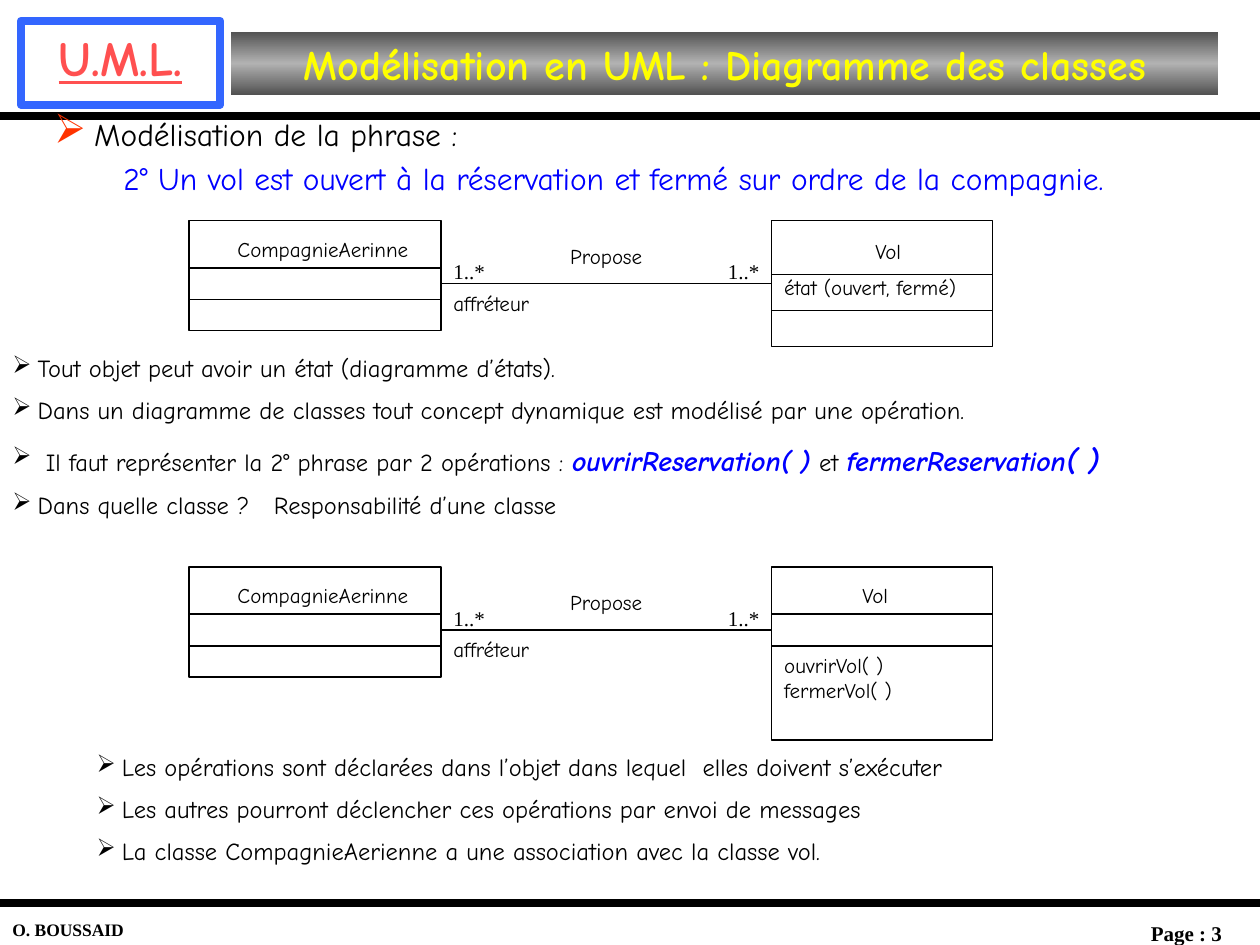
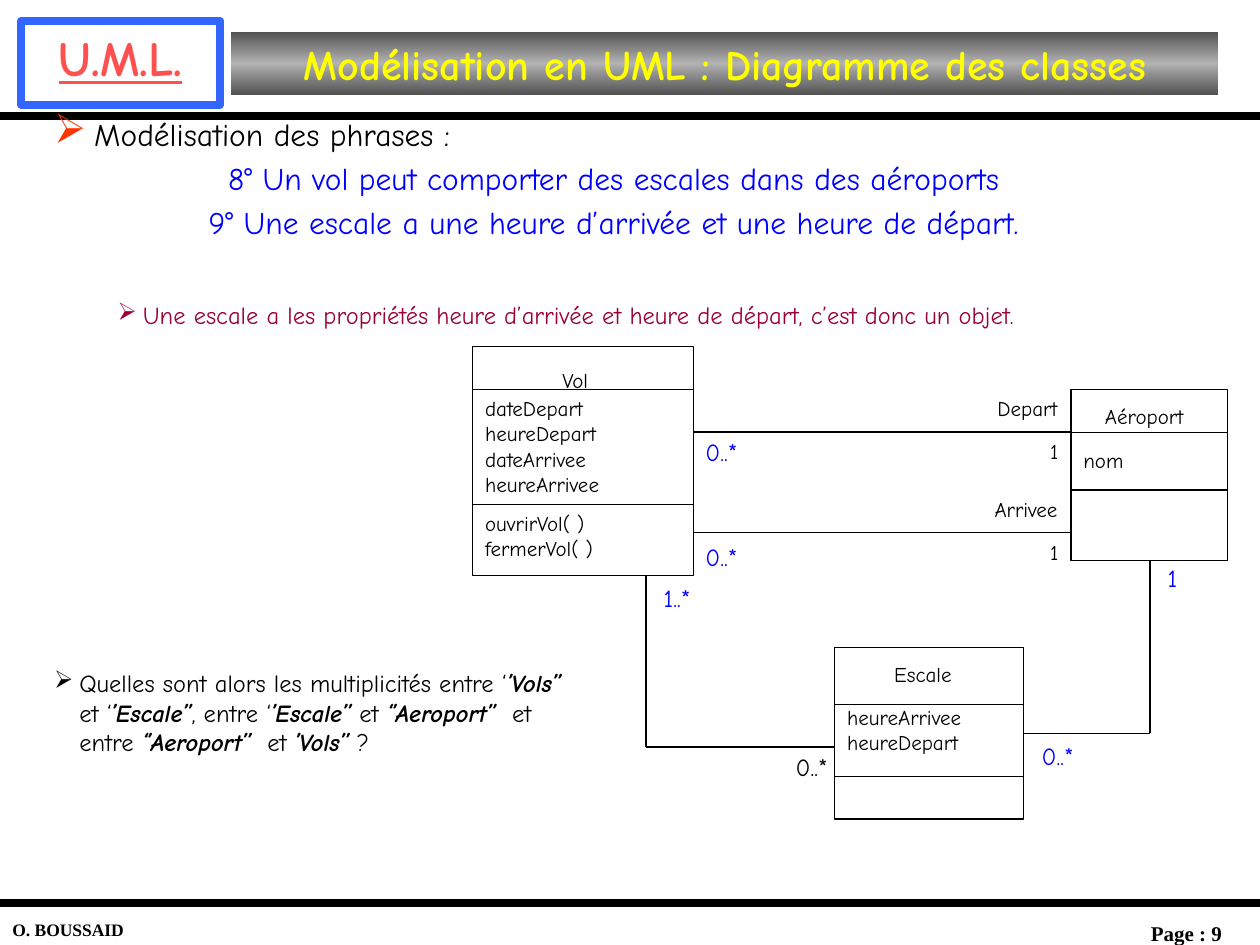
from dataclasses import dataclass
from itertools import pairwise
from typing import Any, NamedTuple

from pptx import Presentation
from pptx.dml.color import RGBColor as Rgb
from pptx.enum.shapes import MSO_CONNECTOR as Conn, MSO_SHAPE as Kind
from pptx.enum.text import MSO_ANCHOR as Anchor, MSO_AUTO_SIZE as Fit, PP_ALIGN as Align
from pptx.oxml import parse_xml
from pptx.oxml.ns import nsdecls
from pptx.util import Cm, Pt


@dataclass(frozen=True)
class Theme:
    hand: str = "Comic Neue"
    serif: str = "Times New Roman"
    ink: str = "000000"
    paper: str = "FFFFFF"
    blue: str = "0000FF"
    wine: str = "990033"
    mark: str = "FF3300"
    logo: str = "FF5050"
    frame: str = "3366FF"
    title: str = "FFFF00"
    band: tuple[str, ...] = ("525252", "B2B2B2", "525252")
    huge: int = 28
    head: int = 24
    lead: int = 18
    call: int = 16
    body: int = 14
    small: int = 12
    tiny: int = 10
    thin: float = 0.75
    thick: float = 4.5


T = Theme()


class Bit(NamedTuple):
    """A stretch of text in one style."""
    text: str
    size: int = T.body
    color: str = T.ink
    bold: bool = False
    italic: bool = False
    font: str = T.hand
    under: bool = False


class Para(NamedTuple):
    bits: list[Bit]
    align: Any = Align.LEFT
    gap: float = 0  # space before, as a share of the type size
    hang: float = 0
    bullet: bool = False
    accent: bool = False


class Note(NamedTuple):
    """A short label of a diagram, in cm."""
    text: str
    left: float
    top: float
    width: float
    align: Any = Align.LEFT
    size: int = T.small
    color: str = T.ink
    font: str = T.hand


class Klass(NamedTuple):
    """A UML class; cuts, name and lists are offsets from its corner."""
    name: str
    left: float
    top: float
    width: float
    height: float
    cuts: tuple[float, float]
    label: tuple[float, float, float]
    lists: tuple[tuple[float, str], ...] = ()


def put(target: Any, fmt: dict[str, Any]) -> None:
    for key, value in fmt.items():
        setattr(target, key, value)


def place(shape: Any, left: float, top: float, width: float, height: float) -> None:
    put(shape, {"left": Cm(left), "top": Cm(top), "width": Cm(width), "height": Cm(height)})


def stroke(line: Any, color: str, width: float) -> None:
    line.color.rgb = Rgb.from_string(color)
    line.width = Pt(width)


def mark(props: Any, accent: bool) -> None:
    """Add the arrow bullet, larger and red when accented."""
    tags = ['<a:buChar {} char="➢"/>']
    if accent:
        tags = [f'<a:buClr {{}}><a:srgbClr val="{T.mark}"/></a:buClr>',
                '<a:buSzPct {} val="130000"/>'] + tags
    for tag in tags:
        props.append(parse_xml(tag.format(nsdecls("a"))))


def write(frame: Any, paras: list[Para], inset: float = 0, anchor: Any = Anchor.TOP) -> None:
    put(frame, {"word_wrap": True, "auto_size": Fit.NONE, "vertical_anchor": anchor,
                "margin_left": Cm(0.25), "margin_right": Cm(0.25),
                "margin_top": Cm(inset), "margin_bottom": Cm(inset)})
    for i, para in enumerate(paras):
        line = frame.add_paragraph() if i else frame.paragraphs[0]
        props = line._p.get_or_add_pPr()
        if para.hang:
            props.set("marL", str(Cm(para.hang)))
            props.set("indent", str(-Cm(para.hang)))
        if para.bullet:
            mark(props, para.accent)
        line.alignment = para.align
        if i and para.gap:
            line.space_before = Pt(para.gap * max(bit.size for bit in para.bits))
        for bit in para.bits:
            run = line.add_run()
            run.text = bit.text
            put(run.font, {"name": bit.font, "size": Pt(bit.size), "bold": bit.bold,
                           "italic": bit.italic, "underline": bit.under})
            run.font.color.rgb = Rgb.from_string(bit.color)


def text(slide: Any, left: float, top: float, width: float, height: float,
         paras: list[Para]) -> None:
    box = slide.shapes.add_textbox(Cm(left), Cm(top), Cm(width), Cm(height))
    write(box.text_frame, paras)


def note(slide: Any, item: Note) -> None:
    rows = item.text.split("\n")
    paras = [Para([Bit(row, item.size, item.color, font=item.font)], item.align) for row in rows]
    text(slide, item.left, item.top, item.width, 0.6 * len(rows), paras)


def rule(slide: Any, *points: tuple[float, float], width: float = T.thin) -> None:
    """Join the points with straight lines."""
    for (x1, y1), (x2, y2) in pairwise(points):
        line = slide.shapes.add_connector(Conn.STRAIGHT, Cm(x1), Cm(y1), Cm(x2), Cm(y2))
        stroke(line.line, T.ink, width)
        line._element.spPr.append(parse_xml(f"<a:effectLst {nsdecls('a')}/>"))


def panel(slide: Any, left: float, top: float, width: float, height: float) -> Any:
    box = slide.shapes.add_shape(Kind.RECTANGLE, Cm(left), Cm(top), Cm(width), Cm(height))
    box.shadow.inherit = False
    return box


def klass(slide: Any, item: Klass) -> None:
    box = panel(slide, item.left, item.top, item.width, item.height)
    box.fill.solid()
    box.fill.fore_color.rgb = Rgb.from_string(T.paper)
    stroke(box.line, T.ink, T.thin)
    for cut in item.cuts:
        y = item.top + cut
        rule(slide, (item.left, y), (item.left + item.width, y))
    dx, dy, width = item.label
    note(slide, Note(item.name, item.left + dx, item.top + dy, width, Align.CENTER))
    for dy, rows in item.lists:
        note(slide, Note(rows, item.left, item.top + dy, 4.76))


def points(slide: Any, left: float, top: float, width: float, rows: list[list[Bit]]) -> None:
    """Write a list with arrow bullets."""
    paras = [Para(bits, gap=0.5, hang=0.51, bullet=True) for bits in rows]
    text(slide, left, top, width, len(rows), paras)


def start(deck: Any, page: int, lead: str, quotes: list[str]) -> Any:
    """Add a slide with its title, bands, footer and opening phrases."""
    slide = deck.slides.add_slide(deck.slide_layouts[5])
    title = slide.shapes.title
    place(title, 4.66, 0.64, 19.9, 1.27)
    stops = "".join(f'<a:gs pos="{i * 50000}"><a:srgbClr val="{color}"/></a:gs>'
                    for i, color in enumerate(T.band))
    title._element.spPr.append(parse_xml(
        f'<a:gradFill {nsdecls("a")}><a:gsLst>{stops}</a:gsLst><a:lin ang="5400000"/></a:gradFill>'))
    name = Bit("Modélisation en UML : Diagramme des classes", T.head, T.title, True)
    write(title.text_frame, [Para([name], Align.CENTER)], 0.13, Anchor.MIDDLE)

    logo = panel(slide, 0.42, 0.42, 4.02, 1.69)
    logo.fill.background()
    stroke(logo.line, T.frame, T.thick)
    sign = Bit("U.M.L.", T.huge, T.logo, True, under=True)
    write(logo.text_frame, [Para([sign], Align.CENTER)], 0.13)

    for y in (2.33, 18.2):
        rule(slide, (0, y), (25.4, y), width=T.thick)
    for left, top, label, size, align in (
            (0, 18.52, "O. BOUSSAID", T.tiny, Align.LEFT),
            (22.44, 18.55, f"Page : {page}", T.small, Align.CENTER)):
        text(slide, left, top, 2.96, 0.5,
             [Para([Bit(label, size, bold=True, font=T.serif)], align)])

    opening = [Para([Bit(lead, T.lead)], hang=0.81, bullet=True, accent=True)]
    opening += [Para([Bit(quote, T.lead, T.blue)], Align.CENTER, 0.2, 0.81) for quote in quotes]
    text(slide, 0.84, 2.31, 23.06, len(opening), opening)
    return slide


def offer(slide: Any, top: float, flight: Klass) -> None:
    """Draw the airline linked to one version of the flight class."""
    klass(slide, Klass("CompagnieAerinne", 3.81, top, 5.08, 2.22, (0.95, 1.59),
                       (0.32, 0.32, 4.76)))
    klass(slide, flight)
    rule(slide, (8.89, top + 1.27), (15.56, top + 1.27))
    note(slide, Note("Propose", 9.84, top + 0.45, 4.76, Align.CENTER))
    note(slide, Note("affréteur", 8.89, top + 1.4, 4.76))
    for left, align in ((8.89, Align.LEFT), (13.65, Align.RIGHT)):
        note(slide, Note("1..*", left, top + 0.77, 1.91, align, font=T.serif))


def states(deck: Any) -> None:
    slide = start(deck, 3, "Modélisation de la phrase :", [
        "2° Un vol est ouvert à la réservation et fermé sur ordre de la compagnie."])
    call = {"color": T.blue, "bold": True, "italic": True}
    points(slide, 0, 7.12, 25.4, [
        [Bit("Tout objet peut avoir un état (diagramme d’états).")],
        [Bit("Dans un diagramme de classes tout concept dynamique est modélisé par une opération.")],
        [Bit(" Il faut représenter la 2° phrase par 2 opérations : "),
         Bit("ouvrirReservation( )", T.call, **call), Bit(" et "),
         Bit("fermerReservation", T.call, **call), Bit("( )", T.lead, **call)],
        [Bit("Dans quelle classe ?   Responsabilité d’une classe")]])
    offer(slide, 4.45, Klass("Vol", 15.56, 4.45, 4.45, 2.54, (1.09, 1.81), (0.26, 0.36, 4.17),
                             ((1.08, "état (ouvert, fermé)"),)))
    offer(slide, 11.43, Klass("Vol", 15.56, 11.43, 4.45, 3.49, (0.95, 1.59), (0.32, 0.32, 3.53),
                              ((1.72, "ouvrirVol( )\nfermerVol( )"),)))
    points(slide, 1.7, 15.17, 23.7, [
        [Bit("Les opérations sont déclarées dans l’objet dans lequel  elles doivent s’exécuter")],
        [Bit("Les autres pourront déclencher ces opérations par envoi de messages")],
        [Bit("La classe CompagnieAerienne a une association avec la classe vol.")]])


def stops(deck: Any) -> None:
    slide = start(deck, 9, "Modélisation des phrases :", [
        "8° Un vol peut comporter des escales dans des aéroports",
        "9° Une escale a une heure d’arrivée et une heure de départ."])
    for item in (
            Klass("Vol", 9.53, 6.99, 4.45, 4.62, (0.86, 3.18), (0.3, 0.41, 3.53),
                  ((0.99, "dateDepart\nheureDepart\ndateArrivee\nheureArrivee"),
                   (3.3, "ouvrirVol( )\nfermerVol( )"))),
            Klass("Aéroport", 21.59, 7.85, 3.15, 3.45, (0.87, 2.03), (0, 0.28, 2.95),
                  ((1.17, "nom"),)),
            Klass("Escale", 16.83, 13.06, 3.81, 3.45, (1.14, 2.59), (0.3, 0.28, 2.95),
                  ((1.14, "heureArrivee\nheureDepart"),))):
        klass(slide, item)

    for y, role in ((8.71, "Depart"), (10.74, "Arrivee")):
        rule(slide, (13.98, y), (21.59, y))
        note(slide, Note(role, 18.72, y - 0.73, 2.85, Align.RIGHT))
        note(slide, Note("1", 20.32, y + 0.13, 1.27, Align.RIGHT))
    rule(slide, (23.18, 11.3), (23.18, 14.78), (20.64, 14.78))
    rule(slide, (13.02, 11.61), (13.02, 15.06), (16.83, 15.06))
    note(slide, Note("0..*", 15.24, 15.17, 1.7, Align.RIGHT, T.body))
    for count, left, top in (("0..*", 20.75, 14.94), ("0..*", 13.97, 8.82),
                             ("1..*", 13.13, 11.76), ("1", 23.29, 11.36),
                             ("0..*", 13.97, 10.93)):
        note(slide, Note(count, left, top, 1.7, size=T.body, color=T.blue))

    points(slide, 2.12, 6.05, 22.02, [[Bit(
        "Une escale a les propriétés heure d’arrivée et heure de départ, c’est donc un objet.",
        color=T.wine)]])
    parts = ("Quelles sont alors les multiplicités entre ‘", "’Vols’’", " et ‘", "’Escale’’",
             ", entre ‘", "’Escale’’", " et ", "‘’Aeroport’’", "  et entre ", "‘’Aeroport’’",
             "  et ", "’Vols’’", " ?")
    points(slide, 0.84, 13.47, 11.23, [[
        Bit(part, bold=i % 2 == 1, italic=i % 2 == 1) for i, part in enumerate(parts)]])


def main() -> None:
    deck = Presentation()
    put(deck, {"slide_width": Cm(25.4), "slide_height": Cm(19.05)})
    states(deck)
    stops(deck)
    deck.save("out.pptx")


if __name__ == "__main__":
    main()
